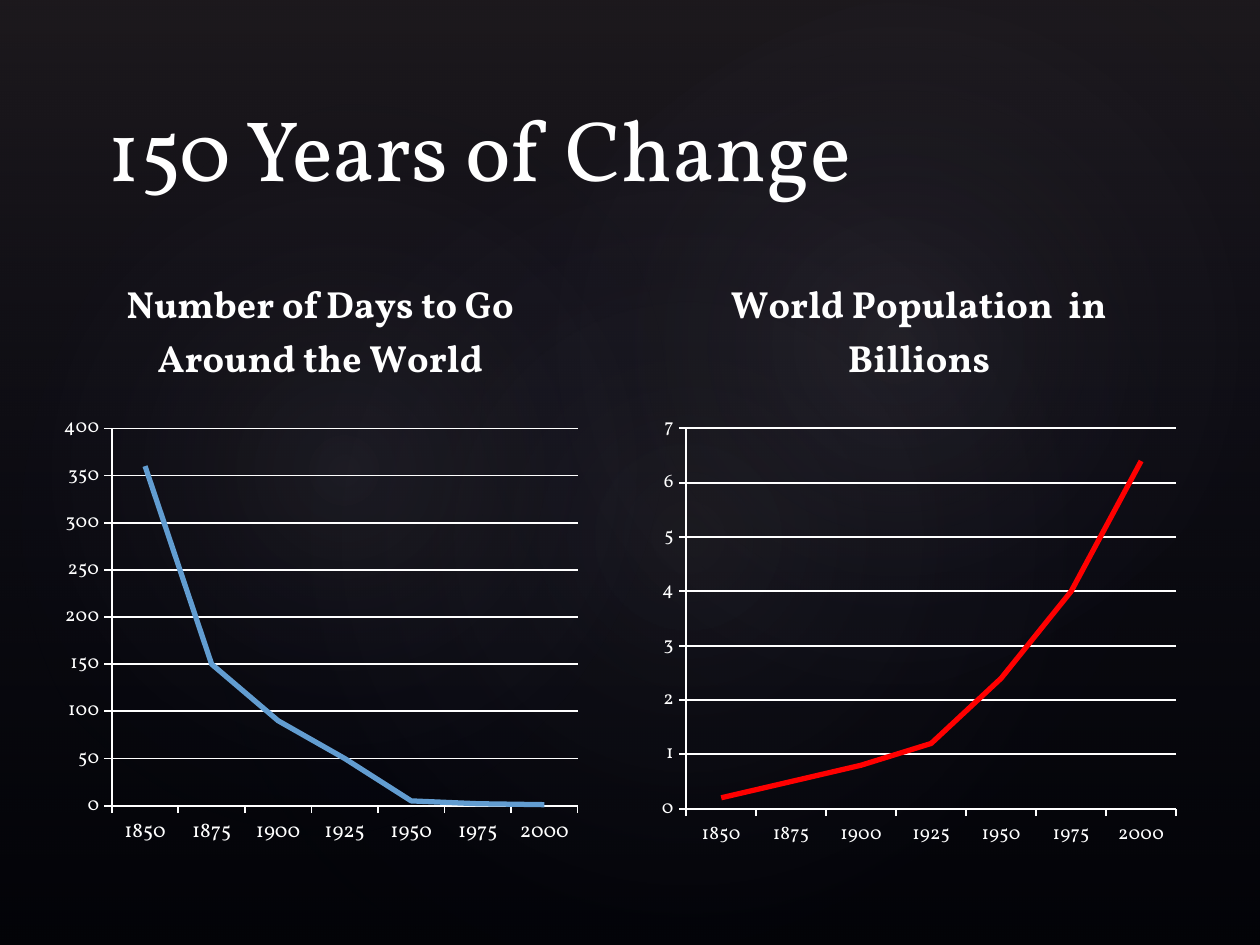
from dataclasses import dataclass

from pptx import Presentation
from pptx.chart.data import CategoryChartData
from pptx.dml.color import RGBColor
from pptx.enum.chart import XL_CHART_TYPE, XL_MARKER_STYLE, XL_TICK_MARK
from pptx.enum.shapes import MSO_SHAPE
from pptx.enum.text import MSO_ANCHOR, MSO_AUTO_SIZE, PP_ALIGN
from pptx.oxml import parse_xml
from pptx.oxml.ns import nsdecls
from pptx.util import Inches, Pt

COLORS = {
    "background": "000000",
    "text": "FFFFFF",
    "days": "629DD1",
    "population": "FF0000",
    "haze": "504652",
    "navy": "242852",
    "glow": "C4BCC6",
}
FONT = "Vollkorn"
YEARS = ["1850", "1875", "1900", "1925", "1950", "1975", "2000"]
LINEAR = '<a:lin ang="5400000" scaled="0"/>'
RADIAL = '<a:path path="circle"><a:fillToRect l="50000" t="50000" r="50000" b="50000"/></a:path>'


@dataclass
class Glow:
    left: float
    top: float
    width: float
    height: float
    rotation: float
    opacity: int


@dataclass
class LineChart:
    title: str
    kind: XL_CHART_TYPE
    left: float
    values: list
    color: str
    maximum: float
    step: float
    year_size: int
    plot_area: tuple  # left, top, width, height as shares of the chart


GLOWS = [
    Glow(1.5, 1.14, 7.92, 6.24, 328.7, 7),
    Glow(-0.3, 1.28, 6.06, 4.9, 294.3, 8),
    Glow(3.58, 0.13, 7.09, 5.2, 328.7, 8),
]
CHARTS = [
    LineChart("Number of Days to Go Around the World", XL_CHART_TYPE.LINE, 0.42,
              [360, 150, 90, 50, 5, 2, 1], "days", 400, 50, 12,
              (0.11, 0.29, 0.87, 0.62)),
    LineChart("World Population  in Billions", XL_CHART_TYPE.LINE_STACKED, 5.17,
              [0.2, 0.5, 0.8, 1.2, 2.4, 4, 6.4], "population", 7, 1, 11,
              (0.065, 0.29, 0.915, 0.625)),
]


def rgb(name: str) -> RGBColor:
    return RGBColor.from_string(COLORS[name])


def format_font(font, size: float, bold: bool = False) -> None:
    font.name = FONT
    font.size = Pt(size)
    font.bold = bold
    font.color.rgb = rgb("text")


def write_text(text_frame, text: str, *, size: float, bold: bool = False,
               align: PP_ALIGN = PP_ALIGN.LEFT) -> None:
    paragraph = text_frame.paragraphs[0]
    paragraph.alignment = align
    run = paragraph.add_run()
    run.text = text
    format_font(run.font, size, bold)


def add_gradient_shape(slide, kind: MSO_SHAPE, box: tuple, stops: list, direction: str):
    """Add a shape whose gradient stops are (position %, color, opacity %)."""
    shape = slide.shapes.add_shape(kind, *map(Inches, box))
    shape.shadow.inherit = False
    shape.line.fill.background()
    stop_xml = "".join(
        f'<a:gs pos="{position * 1000}"><a:srgbClr val="{COLORS[color]}">'
        f'<a:alpha val="{opacity * 1000}"/></a:srgbClr></a:gs>'
        for position, color, opacity in stops
    )
    gradient = parse_xml(
        f'<a:gradFill {nsdecls("a")} rotWithShape="1">'
        f"<a:gsLst>{stop_xml}</a:gsLst>{direction}</a:gradFill>"
    )
    shape._element.spPr.prstGeom.addnext(gradient)
    return shape


def add_backdrop(slide) -> None:
    slide.background.fill.solid()
    slide.background.fill.fore_color.rgb = rgb("background")
    add_gradient_shape(slide, MSO_SHAPE.RECTANGLE, (0, 0, 10, 7.5),
                       [(0, "haze", 36), (100, "navy", 10)], LINEAR)
    for glow in GLOWS:
        ellipse = add_gradient_shape(
            slide, MSO_SHAPE.OVAL, (glow.left, glow.top, glow.width, glow.height),
            [(0, "glow", glow.opacity), (58, "navy", 0)], RADIAL)
        ellipse.rotation = glow.rotation


def add_title(slide, text: str) -> None:
    title = slide.shapes.title
    title.left, title.top, title.width, title.height = map(Inches, (0.75, 0.58, 8.25, 1))
    frame = title.text_frame
    frame.auto_size = MSO_AUTO_SIZE.NONE
    frame.vertical_anchor = MSO_ANCHOR.BOTTOM
    frame.margin_bottom = 0
    write_text(frame, text, size=49)
    slide.shapes._spTree.append(title._element)  # in front of the backdrop


def style_line(line, color: str, width: float) -> None:
    line.color.rgb = rgb(color)
    line.width = Pt(width)


def format_axis(axis, size: float) -> None:
    axis.major_tick_mark = XL_TICK_MARK.OUTSIDE
    axis.minor_tick_mark = XL_TICK_MARK.NONE
    format_font(axis.tick_labels.font, size)
    style_line(axis.format.line, "text", 1)


def place_plot_area(chart, area: tuple) -> None:
    sizes = "".join(f'<c:{key} val="{share}"/>' for key, share in zip("xywh", area))
    layout = parse_xml(
        f'<c:layout {nsdecls("c")}><c:manualLayout><c:layoutTarget val="inner"/>'
        f'<c:xMode val="edge"/><c:yMode val="edge"/>{sizes}</c:manualLayout></c:layout>'
    )
    plot_area = chart._chartSpace.chart.plotArea
    for old_layout in plot_area.findall(layout.tag):
        plot_area.remove(old_layout)
    plot_area.insert(0, layout)


def add_line_chart(slide, spec_chart: LineChart) -> None:
    data = CategoryChartData()
    data.categories = YEARS
    data.add_series("Series 1", spec_chart.values)
    chart = slide.shapes.add_chart(
        spec_chart.kind, Inches(spec_chart.left), Inches(2),
        Inches(4.25), Inches(4.83), data).chart
    format_font(chart.font, 18)
    chart.has_legend = False
    chart.has_title = True
    chart.chart_title.include_in_layout = False
    write_text(chart.chart_title.text_frame, spec_chart.title, size=21.6, bold=True,
               align=PP_ALIGN.CENTER)

    format_axis(chart.category_axis, spec_chart.year_size)
    value_axis = chart.value_axis
    format_axis(value_axis, 11)
    value_axis.minimum_scale = 0
    value_axis.maximum_scale = spec_chart.maximum
    value_axis.major_unit = spec_chart.step
    value_axis.has_major_gridlines = True
    style_line(value_axis.major_gridlines.format.line, "text", 1)

    plot = chart.plots[0]
    plot.vary_by_categories = False
    series = plot.series[0]
    series.smooth = False
    series.marker.style = XL_MARKER_STYLE.NONE
    style_line(series.format.line, spec_chart.color, 3)
    place_plot_area(chart, spec_chart.plot_area)


def main() -> None:
    presentation = Presentation()
    presentation.slide_width = Inches(10)
    presentation.slide_height = Inches(7.5)
    slide = presentation.slides.add_slide(presentation.slide_layouts[5])
    add_backdrop(slide)
    add_title(slide, "150 Years of Change")
    for line_chart in CHARTS:
        add_line_chart(slide, line_chart)
    presentation.save("out.pptx")


if __name__ == "__main__":
    main()
